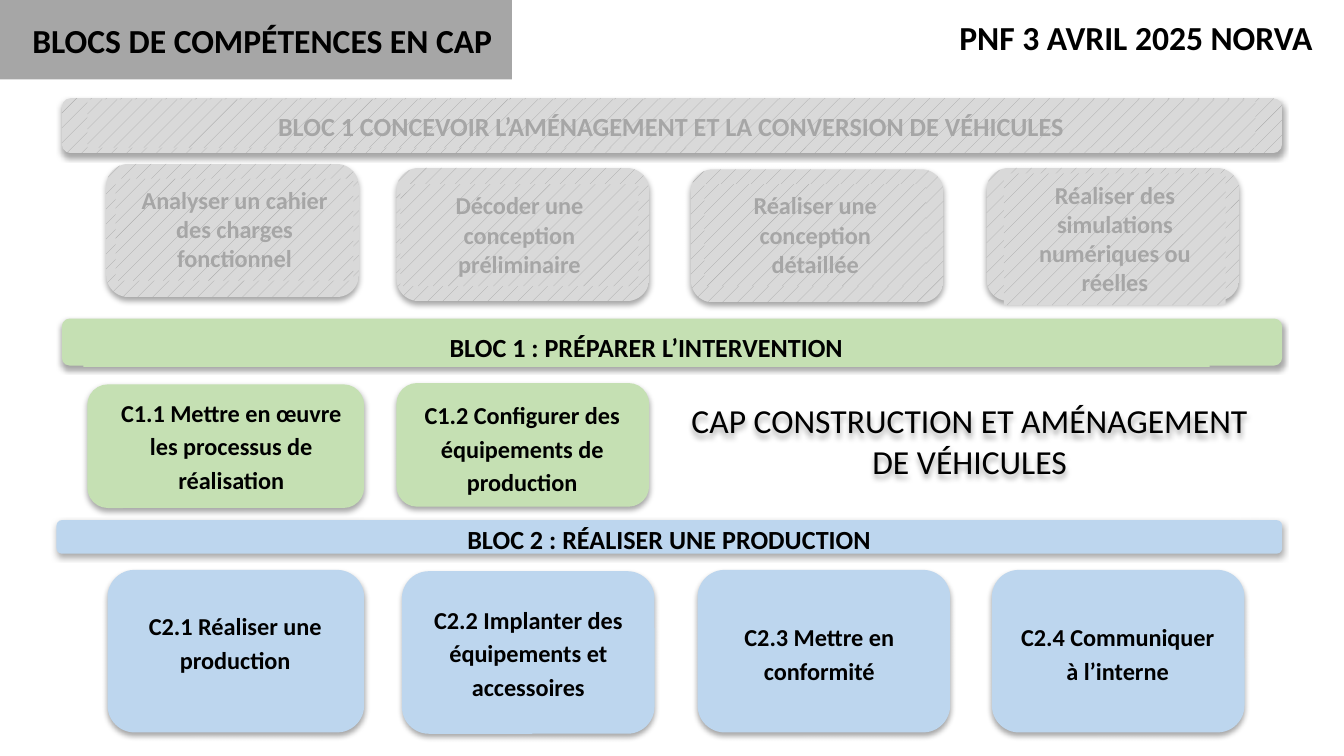
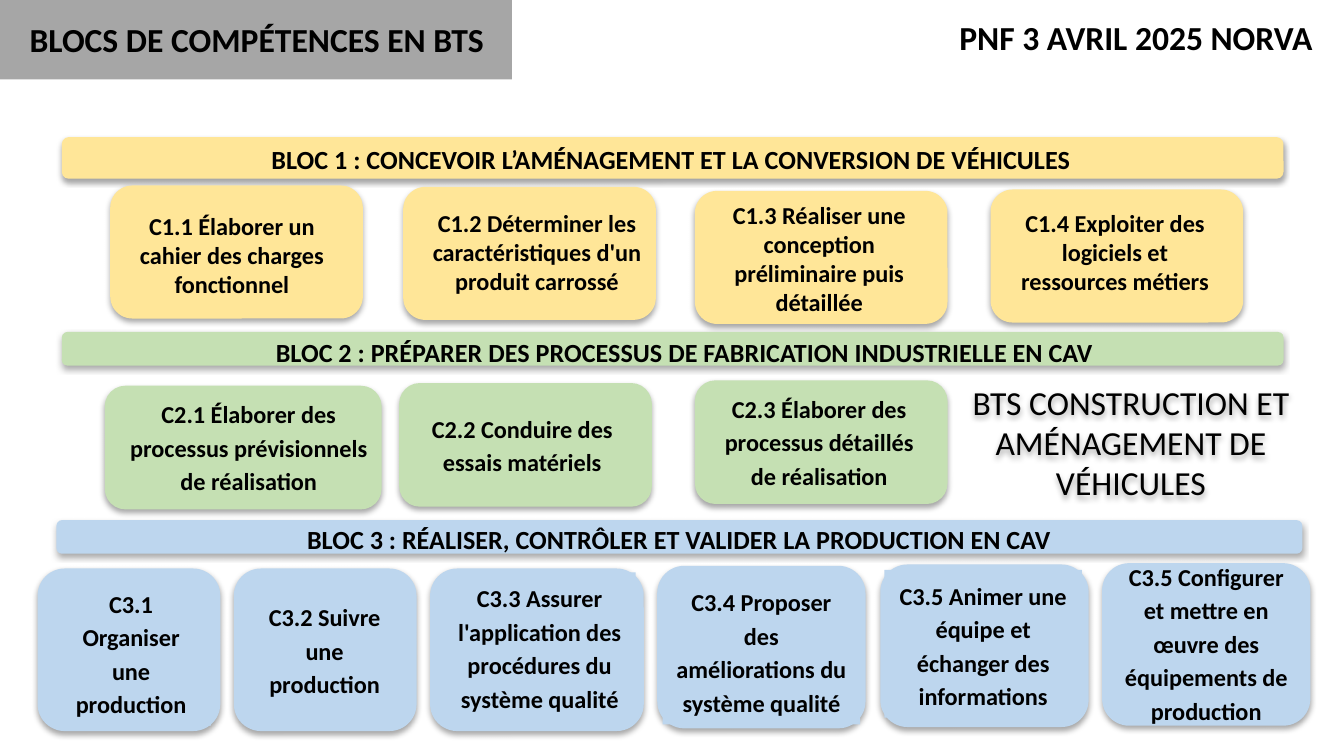
from pptx import Presentation
from pptx import util as u
from pptx.dml.color import RGBColor
from pptx.enum import dml, shapes, text
from pptx.oxml import parse_xml
from pptx.oxml.ns import nsdecls, qn

BLACK = RGBColor(0, 0, 0)
WHITE = RGBColor(255, 255, 255)
GREY = RGBColor(0xA6, 0xA6, 0xA6)
PALE = RGBColor(0xD9, 0xD9, 0xD9)
GREEN = RGBColor(0xC5, 0xE0, 0xB3)
BLUE = RGBColor(0xBD, 0xD6, 0xEE)
SAND = RGBColor(0xFF, 0xE6, 0x98)

FONT = "Calibri"
EVENT = "PNF 3 AVRIL 2025 NORVA"
SHADOW = (
    f'<a:outerShdw {nsdecls("a")} blurRad="40000" dist="23000" dir="5400000" rotWithShape="0">'
    '<a:srgbClr val="000000"><a:alpha val="35000"/></a:srgbClr></a:outerShdw>'
)

CAP = {
    "title": ("BLOCS DE COMPÉTENCES EN CAP", (0.14, 0.1, 3.66, 0.4)),
    "degree": ("CAP CONSTRUCTION ET AMÉNAGEMENT DE VÉHICULES", (4.98, 2.93, 4.47, 0.71)),
    "blocks": [
        {
            "tint": PALE, "high": 0.99, "gap": 1,
            "bar": ((0.46, 0.73, 9.08, 0.41), (0.65, 0.74, 8.69, 0.36),
                    "BLOC 1 CONCEVOIR L’AMÉNAGEMENT ET LA CONVERSION DE VÉHICULES", True),
            "cards": [
                (0.79, 1.22, 1.88, 0.86, 1.33, 1.77, 3, "Analyser un cahier des charges fonctionnel", True),
                (2.95, 1.25, 1.88, 2.98, 1.37, 1.77, 3, "Décoder une conception préliminaire", True),
                (5.14, 1.26, 1.88, 5.24, 1.37, 1.65, 3, "Réaliser une conception détaillée", True),
                (7.34, 1.25, 1.88, 7.47, 1.29, 1.65, 4, "Réaliser des simulations numériques ou réelles", True),
            ],
        },
        {
            "tint": GREEN, "high": 0.92, "gap": 1.15,
            "bar": ((0.46, 2.37, 9.08, 0.35), (0.62, 2.38, 8.38, 0.35),
                    "BLOC 1 : PRÉPARER L’INTERVENTION", True),
            "cards": [
                (0.65, 2.86, 2.06, 0.73, 2.88, 1.98, 3, "C1.1 Mettre en œuvre les processus de réalisation", False),
                (2.95, 2.85, 1.88, 3, 2.9, 1.77, 3, "C1.2 Configurer des équipements de production", False),
            ],
        },
        {
            "tint": BLUE, "high": 1.21, "gap": 1.15,
            "bar": ((0.42, 3.87, 9.12, 0.25), None, "BLOC 2 : RÉALISER UNE PRODUCTION", False),
            "cards": [
                (0.8, 4.24, 1.91, 0.91, 4.47, 1.68, 2, "C2.1 Réaliser une production", True),
                (2.99, 4.25, 1.88, 3.02, 4.42, 1.82, 3, "C2.2 Implanter des équipements et accessoires", True),
                (5.19, 4.24, 1.88, 5.25, 4.55, 1.69, 2, "C2.3 Mettre en conformité", True),
                (7.38, 4.24, 1.88, 7.47, 4.55, 1.69, 2, "C2.4 Communiquer à l’interne", True),
            ],
        },
    ],
}

BTS = {
    "title": ("BLOCS DE COMPÉTENCES EN BTS", (0.12, 0.09, 3.75, 0.4)),
    "degree": ("BTS CONSTRUCTION ET AMÉNAGEMENT DE VÉHICULES", (6.92, 2.79, 2.99, 1.01)),
    "blocks": [
        {
            "tint": SAND, "high": 0.99, "gap": 1,
            "bar": ((0.46, 1.02, 9.09, 0.31), (0.45, 0.98, 9.09, 0.36),
                    "BLOC 1 : CONCEVOIR L’AMÉNAGEMENT ET LA CONVERSION DE VÉHICULES", False),
            "cards": [
                (0.82, 1.38, 1.88, 0.84, 1.52, 1.77, 3, "C1.1 Élaborer un cahier des charges fonctionnel", False),
                (3, 1.39, 1.88, 3.11, 1.5, 1.77, 3, "C1.2 Déterminer les caractéristiques d'un produit carrossé", False),
                (5.17, 1.42, 1.88, 5.27, 1.44, 1.65, 4, "C1.3 Réaliser une conception préliminaire puis détaillée", False),
                (7.37, 1.41, 1.88, 7.44, 1.5, 1.71, 3, "C1.4 Exploiter des logiciels et ressources métiers", False),
            ],
        },
        {
            "tint": GREEN, "high": 0.92, "gap": 1.15,
            "bar": ((0.46, 2.47, 9.09, 0.25), (0.55, 2.42, 9.09, 0.36),
                    "BLOC 2 : PRÉPARER DES PROCESSUS DE FABRICATION INDUSTRIELLE EN CAV", False),
            "cards": [
                (0.78, 2.87, 2.06, 0.86, 2.89, 1.98, 3, "C2.1 Élaborer des processus prévisionnels de réalisation", False),
                (2.97, 2.85, 1.88, 3, 3, 1.77, 2, "C2.2 Conduire des essais matériels", False),
                (5.17, 2.83, 1.88, 5.21, 2.85, 1.77, 3, "C2.3 Élaborer des processus détaillés de réalisation", False),
            ],
        },
        {
            "tint": BLUE, "high": 1.21, "gap": 1.15,
            "bar": ((0.42, 3.87, 9.27, 0.25), None,
                    "BLOC 3 : RÉALISER, CONTRÔLER ET VALIDER LA PRODUCTION EN CAV", False),
            "cards": [
                (0.28, 4.23, 1.36, 0.38, 4.3, 1.19, 4, "C3.1 Organiser une production", True),
                (1.74, 4.23, 1.36, 1.76, 4.4, 1.31, 3, "C3.2 Suivre une production", True),
                (3.2, 4.23, 1.59, 3.3, 4.26, 1.43, 4, "C3.3 Assurer l'application des procédures du système qualité", True),
                (4.89, 4.21, 1.55, 4.93, 4.29, 1.47, 4, "C3.4 Proposer des améliorations du système qualité", True),
                (6.55, 4.2, 1.55, 6.58, 4.24, 1.47, 4, "C3.5 Animer une équipe et échanger des informations", True),
                (8.2, 4.19, 1.55, 8.24, 4.1, 1.47, 5, "C3.5 Configurer et mettre en œuvre des équipements de production", False),
            ],
        },
    ],
}


def inch(box):
    return [u.Inches(n) for n in box]


def paint(shape, tint):
    if tint == PALE:
        shape.fill.patterned()
        shape.fill.pattern = dml.MSO_PATTERN.PERCENT_10
        shape.fill.fore_color.rgb = GREY
        shape.fill.back_color.rgb = PALE
    else:
        shape.fill.solid()
        shape.fill.fore_color.rgb = tint


def shade(shape):
    shape.shadow.inherit = False
    shape.element.spPr.find(qn("a:effectLst")).append(parse_xml(SHADOW))


def write(shape, words, size, bold=True, ink=BLACK, gap=1, align=text.PP_ALIGN.CENTER):
    frame = shape.text_frame
    frame.text = words
    frame.word_wrap = True
    par = frame.paragraphs[0]
    par.alignment = align
    par.line_spacing = gap
    par.font.name = FONT
    par.font.size = u.Pt(size)
    par.font.bold = bold
    par.font.color.rgb = ink
    return frame


def note(tree, box, words, size, tint=None, **style):
    shape = tree.add_textbox(*inch(box))
    if tint is not None:
        paint(shape, tint)
    frame = write(shape, words, size, **style)
    frame.auto_size = text.MSO_AUTO_SIZE.SHAPE_TO_FIT_TEXT
    return shape


def panel(tree, box, tint):
    shape = tree.add_shape(shapes.MSO_SHAPE.FLOWCHART_ALTERNATE_PROCESS, *inch(box))
    paint(shape, tint)
    shape.line.fill.background()
    shade(shape)
    return shape


def block(slide, tint, high, gap, bar, cards):
    ink = GREY if tint == PALE else BLACK
    box, label, words, full = bar
    strip = panel(slide.shapes, box, tint)
    if label:
        note(slide.shapes, label, words, 14, tint if full else None, ink=ink, gap=1.15)
    else:
        frame = write(strip, words, 14, ink=ink, gap=1.15)
        frame.vertical_anchor = text.MSO_ANCHOR.MIDDLE
    step = 0.22 if gap == 1 else 0.25
    for left, top, wide, x, y, w, lines, words, full in cards:
        tree = slide.shapes.add_group_shape().shapes
        panel(tree, (left, top, wide, high), tint)
        note(tree, (x, y, w, 0.1 + step * lines), words, 13, tint if full else None, ink=ink, gap=gap)


def head(slide, words, box):
    band = slide.shapes.add_shape(shapes.MSO_SHAPE.RECTANGLE, *inch((0, 0, 3.81, 0.59)))
    paint(band, GREY)
    band.line.fill.background()
    band.shadow.inherit = False
    title = slide.shapes.title
    title.element.addprevious(band.element)
    title.left, title.top, title.width, title.height = inch(box)
    frame = write(title, words, 18, align=text.PP_ALIGN.LEFT)
    frame.word_wrap = False
    frame.auto_size = text.MSO_AUTO_SIZE.SHAPE_TO_FIT_TEXT
    frame.vertical_anchor = text.MSO_ANCHOR.TOP
    note(slide.shapes, (7.04, 0.08, 2.96, 0.4), EVENT, 18, WHITE, align=text.PP_ALIGN.LEFT)


def main():
    deck = Presentation()
    deck.slide_width = u.Inches(10)
    deck.slide_height = deck.slide_width * 9 // 16
    for page in (CAP, BTS):
        slide = deck.slides.add_slide(deck.slide_layouts[5])
        head(slide, *page["title"])
        for part in page["blocks"]:
            block(slide, **part)
        words, box = page["degree"]
        shade(note(slide.shapes, box, words, 18, bold=False))
    deck.save("out.pptx")


if __name__ == "__main__":
    main()
